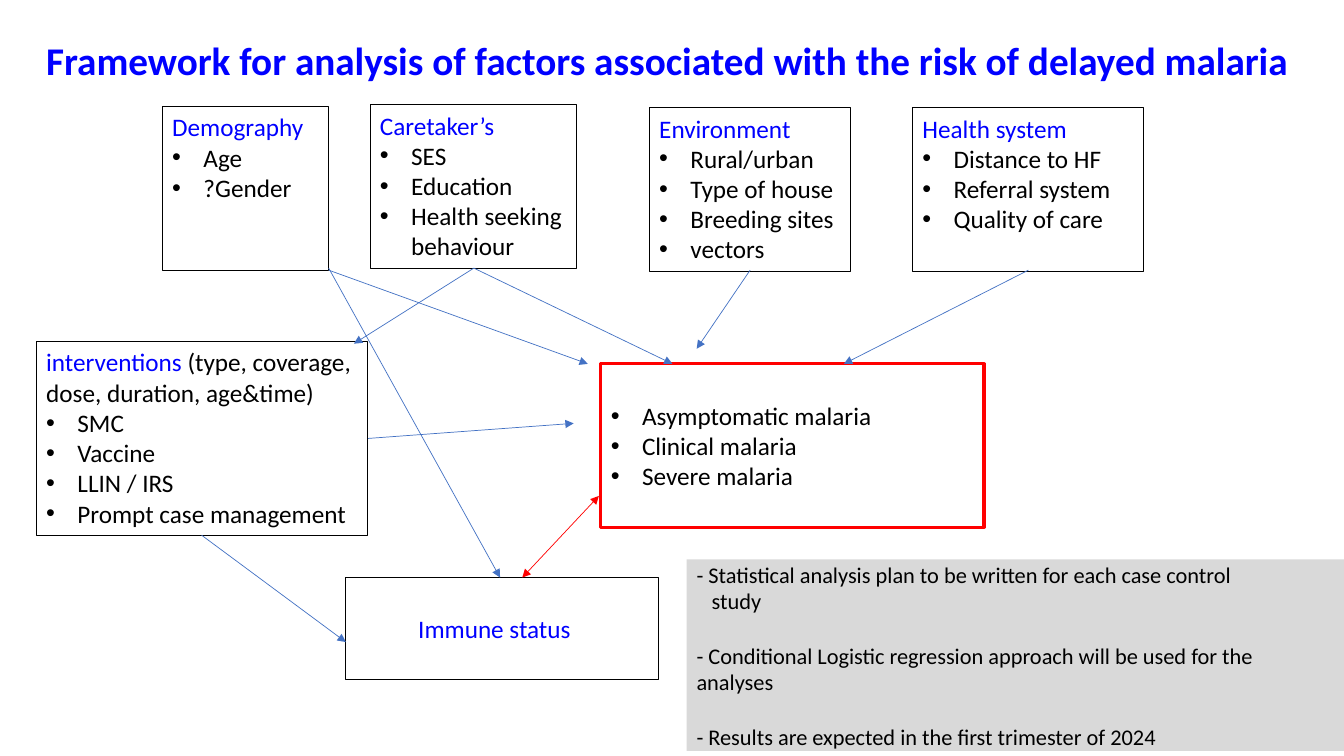
from dataclasses import dataclass

from lxml.etree import SubElement
from pptx import Presentation
from pptx.dml.color import RGBColor
from pptx.enum.shapes import MSO_CONNECTOR, MSO_SHAPE
from pptx.enum.text import MSO_ANCHOR as Anchor, PP_ALIGN
from pptx.oxml.ns import qn
from pptx.slide import Slide
from pptx.text.text import TextFrame
from pptx.util import Inches, Length, Pt


@dataclass(frozen=True)
class Theme:
    font: str = "Calibri"
    heading: str = "0000FF"
    body: str = "000000"
    outcome: str = "FF0000"
    link: str = "4472C4"
    note: str = "D9D9D9"
    title_size: float = 28
    box_size: float = 18
    note_size: float = 16
    note_gap: float = 19.5
    box_line: float = 0.75
    outcome_line: float = 2.25
    link_line: float = 0.5
    bullet_indent: float = 0.31


@dataclass(frozen=True)
class Line:
    """A paragraph: a lead in the heading colour, then the rest in the body colour."""
    lead: str = ""
    rest: str = ""
    bulleted: bool = False
    indent: float = 0
    space_before: float = 0


@dataclass(frozen=True)
class Box:
    """A rectangle placed in grid columns and rows."""
    column: float
    row: float
    columns: float
    rows: float
    lines: tuple[Line, ...]
    outline: str | None = None
    outline_width: float = 0
    fill: str | None = None
    size: float = 18
    anchor: Anchor = Anchor.TOP
    right_inset: float = 0.1


@dataclass(frozen=True)
class Link:
    start: tuple[float, float]
    end: tuple[float, float]
    color: str
    two_way: bool = False


THEME = Theme()
SLIDE_WIDTH, SLIDE_HEIGHT = 13.33, 7.5
GRID_COLUMNS, GRID_ROWS = 133.3, 75


def across(columns: float) -> Length:
    return Inches(columns * SLIDE_WIDTH / GRID_COLUMNS)


def down(rows: float) -> Length:
    return Inches(rows * SLIDE_HEIGHT / GRID_ROWS)


def color(code: str) -> RGBColor:
    return RGBColor.from_string(code)


def bullets(*items: str) -> tuple[Line, ...]:
    return tuple(Line(rest=item, bulleted=True) for item in items)


def write(frame: TextFrame, lines: tuple[Line, ...], *, size: float,
          bold: bool = False, anchor: Anchor = Anchor.TOP,
          right_inset: float = 0.1) -> None:
    frame.word_wrap = True
    frame.vertical_anchor = anchor
    frame.margin_right = Inches(right_inset)
    for index, line in enumerate(lines):
        paragraph = frame.add_paragraph() if index else frame.paragraphs[0]
        paragraph.alignment = PP_ALIGN.LEFT
        paragraph.space_before = Pt(line.space_before)
        properties = paragraph._p.get_or_add_pPr()
        if line.bulleted:
            hang = Inches(THEME.bullet_indent)
            properties.set("marL", str(hang))
            properties.set("indent", str(-hang))
            SubElement(properties, qn("a:buFont"), typeface="Arial")
            SubElement(properties, qn("a:buChar"), char="•")
        elif line.indent:
            properties.set("marL", str(Inches(line.indent)))
        for text, tint in ((line.lead, THEME.heading), (line.rest, THEME.body)):
            if text:
                run = paragraph.add_run()
                run.text = text
                run.font.name = THEME.font
                run.font.size = Pt(size)
                run.font.bold = bold
                run.font.color.rgb = color(tint)


def draw_box(slide: Slide, box: Box) -> None:
    panel = slide.shapes.add_shape(
        MSO_SHAPE.RECTANGLE, across(box.column), down(box.row),
        across(box.columns), down(box.rows))
    panel.shadow.inherit = False
    if box.fill:
        panel.fill.solid()
        panel.fill.fore_color.rgb = color(box.fill)
    else:
        panel.fill.background()
    if box.outline:
        panel.line.color.rgb = color(box.outline)
        panel.line.width = Pt(box.outline_width)
    else:
        panel.line.fill.background()
    write(panel.text_frame, box.lines, size=box.size, anchor=box.anchor,
          right_inset=box.right_inset)


def draw_link(slide: Slide, link: Link) -> None:
    arrow = slide.shapes.add_connector(
        MSO_CONNECTOR.STRAIGHT, across(link.start[0]), down(link.start[1]),
        across(link.end[0]), down(link.end[1]))
    arrow.line.color.rgb = color(link.color)
    arrow.line.width = Pt(THEME.link_line)
    stroke = arrow.line._get_or_add_ln()
    if link.two_way:
        SubElement(stroke, qn("a:headEnd"), type="triangle")
    SubElement(stroke, qn("a:tailEnd"), type="triangle")
    SubElement(arrow._element.spPr, qn("a:effectLst"))


FACTOR = {"outline": THEME.body, "outline_width": THEME.box_line, "size": THEME.box_size}

BOXES = (
    Box(16.1, 10.6, 16.5, 16.2,
        (Line("Demography"), *bullets("Age", "?Gender")), **FACTOR),
    Box(36.7, 10.4, 20.5, 16.2,
        (Line("Caretaker’s"),
         *bullets("SES", "Education", "Health seeking behaviour")), **FACTOR),
    Box(64.4, 10.7, 20, 16.2,
        (Line("Environment"),
         *bullets("Rural/urban", "Type of house", "Breeding sites", "vectors")), **FACTOR),
    Box(90.5, 10.7, 22.9, 16.2,
        (Line("Health system"),
         *bullets("Distance to HF", "Referral system", "Quality of care")), **FACTOR),
    Box(3.6, 33.9, 32.9, 19.2,
        (Line("interventions", " (type, coverage, dose, duration, age&time)"),
         *bullets("SMC", "Vaccine", "LLIN / IRS", "Prompt case management")), **FACTOR),
    Box(34.3, 57.3, 31, 10.1, (Line("Immune status", indent=0.62),),
        anchor=Anchor.MIDDLE, **FACTOR),
    Box(59.6, 36.1, 38, 16.2,
        bullets("Asymptomatic malaria", "Clinical malaria", "Severe malaria"),
        THEME.outcome, THEME.outcome_line, size=THEME.box_size, anchor=Anchor.MIDDLE),
    Box(68.1, 55.5, 65.2, 19, (
        Line(rest="- Statistical analysis plan to be written for each case control"),
        Line(rest="study", indent=0.15),
        Line(rest="- Conditional Logistic regression approach will be used for the analyses",
             space_before=THEME.note_gap),
        Line(rest="- Results are expected in the first trimester of 2024",
             space_before=THEME.note_gap),
    ), fill=THEME.note, size=THEME.note_size, anchor=Anchor.MIDDLE, right_inset=0.2),
)

LINKS = (
    Link((59.4, 49.2), (51.8, 57.3), THEME.outcome, two_way=True),
    Link((47, 26.6), (35.1, 34.1), THEME.link),
    Link((36.5, 43.5), (56.9, 42), THEME.link),
    Link((32.6, 26.8), (58.3, 36.1), THEME.link),
    Link((47, 26.6), (66.7, 36.1), THEME.link),
    Link((74.4, 26.8), (69.1, 34.6), THEME.link),
    Link((102, 26.8), (83.7, 36.1), THEME.link),
    Link((20, 53.1), (34.3, 63.7), THEME.link),
    Link((32.6, 26.6), (49.6, 57.3), THEME.link),
)


def main() -> None:
    deck = Presentation()
    deck.slide_width, deck.slide_height = Inches(SLIDE_WIDTH), Inches(SLIDE_HEIGHT)
    slide = deck.slides.add_slide(deck.slide_layouts[6])
    for box in BOXES:
        draw_box(slide, box)
    for link in LINKS:
        draw_link(slide, link)
    title = slide.shapes.add_textbox(across(3.6), down(3.1), across(129.7), down(5.7))
    write(title.text_frame, (Line(
        "Framework for analysis of factors associated with the risk of delayed malaria"),),
        size=THEME.title_size, bold=True)
    deck.save("out.pptx")


if __name__ == "__main__":
    main()
